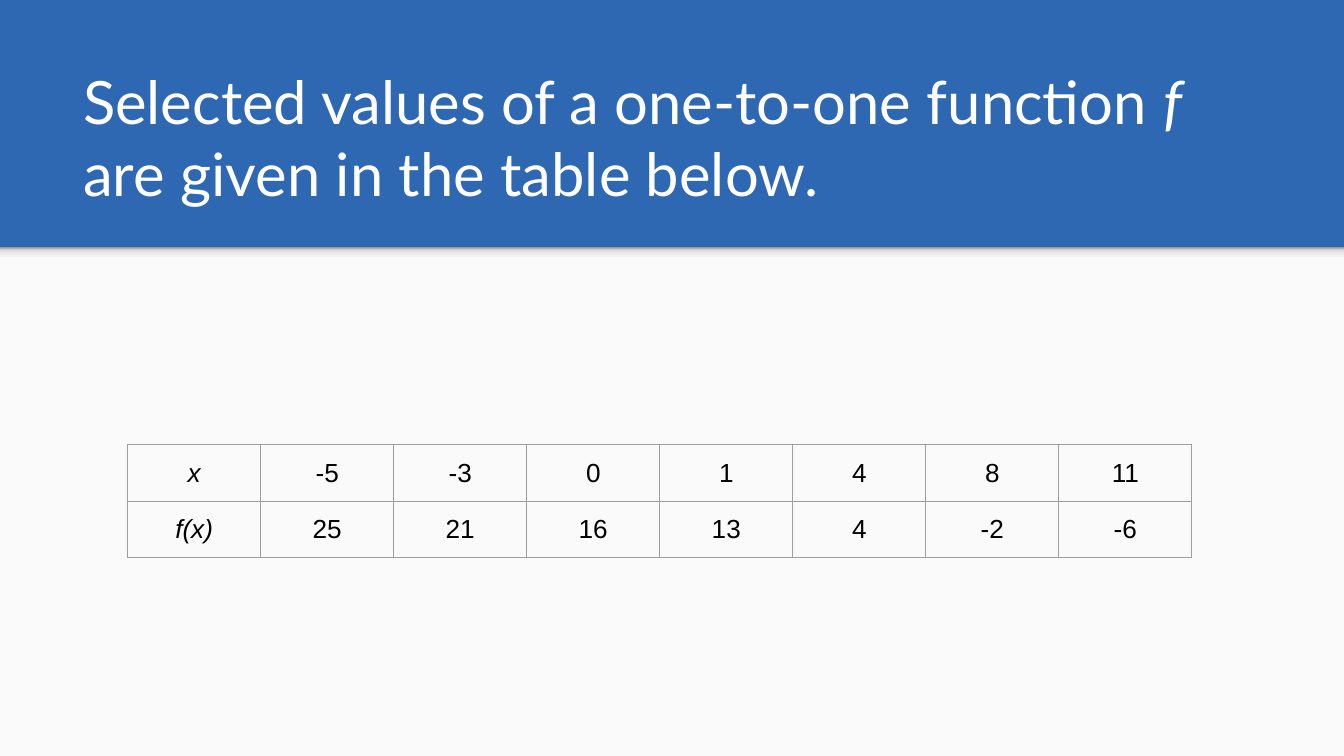
from lxml.etree import SubElement
from pptx import Presentation
from pptx.dml.color import RGBColor
from pptx.enum.shapes import MSO_SHAPE as Shape
from pptx.enum.text import MSO_ANCHOR as Anchor, PP_ALIGN as Align
from pptx.oxml.ns import qn
from pptx.util import Inches, Pt

BLUE, PAPER, WHITE, BLACK, GRAY = "2E67B2", "FAFAFA", "FFFFFF", "000000", "9E9E9E"
SHADOW_STOPS = [(0, "F9F9F9"), (36, "F9F9F9"), (80, "DEDEDE"), (100, "999999")]
TITLE_RUNS = [
    ("Selected values of a one-to-one function ", False),
    ("f", True),
    (" are given in the table below.", False),
]
FUNCTION_VALUES = [
    ["x", "-5", "-3", "0", "1", "4", "8", "11"],
    ["f(x)", "25", "21", "16", "13", "4", "-2", "-6"],
]
TITLE_FONT = {"name": "Lato", "size": Pt(32)}
CELL_FONT = {"name": "Arial", "size": Pt(14), "bold": False}
MARGINS = {f"margin_{side}": Inches(0.1) for side in ("left", "top", "right", "bottom")}
CELL_MARGINS = {**MARGINS, "margin_bottom": Inches(0.08)}


def color(value):
    return RGBColor.from_string(value)


def set_format(target, values):
    for name, value in values.items():
        setattr(target, name, value)


def add_run(paragraph, text, font_format, font_color, italic):
    run = paragraph.add_run()
    run.text = text
    set_format(run.font, {**font_format, "italic": italic})
    run.font.color.rgb = color(font_color)


def add_rectangle(slide, left, top, width, height, fill):
    shape = slide.shapes.add_shape(
        Shape.RECTANGLE, Inches(left), Inches(top), Inches(width), Inches(height)
    )
    shape.shadow.inherit = False
    shape.line.fill.background()
    shape.fill.solid()
    shape.fill.fore_color.rgb = color(fill)
    return shape


def set_gradient(shape, stops):
    shape.fill.gradient()
    shape.fill.gradient_angle = 90
    stop_list = shape.element.spPr.find(qn("a:gradFill")).find(qn("a:gsLst"))
    for stop in list(stop_list):
        stop_list.remove(stop)
    for position, value in stops:
        stop = SubElement(stop_list, qn("a:gs"), pos=str(position * 1000))
        SubElement(stop, qn("a:srgbClr"), val=value)


def add_title(slide, left, top, width, height, runs):
    box = slide.shapes.add_textbox(
        Inches(left), Inches(top), Inches(width), Inches(height)
    )
    frame = box.text_frame
    set_format(frame, {**MARGINS, "word_wrap": True, "vertical_anchor": Anchor.BOTTOM})
    for text, italic in runs:
        add_run(frame.paragraphs[0], text, TITLE_FONT, WHITE, italic)


def set_borders(cell, line_color, width):
    properties = cell._tc.get_or_add_tcPr()
    for side in ("a:lnL", "a:lnR", "a:lnT", "a:lnB"):
        line = SubElement(properties, qn(side), w=str(Pt(width)))
        fill = SubElement(line, qn("a:solidFill"))
        SubElement(fill, qn("a:srgbClr"), val=line_color)


def add_value_table(slide, left, top, column_width, row_height, rows):
    row_count, column_count = len(rows), len(rows[0])
    table = slide.shapes.add_table(
        row_count, column_count, Inches(left), Inches(top),
        Inches(column_width * column_count), Inches(row_height * row_count),
    ).table
    set_format(table, {"first_row": False, "horz_banding": False})
    for row_index, row in enumerate(rows):
        for column_index, text in enumerate(row):
            cell = table.cell(row_index, column_index)
            set_format(cell, CELL_MARGINS)
            set_borders(cell, GRAY, 0.75)
            cell.fill.background()
            paragraph = cell.text_frame.paragraphs[0]
            paragraph.alignment = Align.CENTER
            add_run(paragraph, text, CELL_FONT, BLACK, column_index == 0)


def main():
    presentation = Presentation()
    slide_width = Inches(10)
    slide_size = {"slide_width": slide_width, "slide_height": slide_width * 9 // 16}
    set_format(presentation, slide_size)
    slide = presentation.slides.add_slide(presentation.slide_layouts[6])
    slide.background.fill.solid()
    slide.background.fill.fore_color.rgb = color(BLUE)
    add_rectangle(slide, 0, 1.84, 10, 3.79, PAPER)
    band_shadow = add_rectangle(slide, 0, 1.84, 10, 0.12, PAPER)
    set_gradient(band_shadow, SHADOW_STOPS)
    add_title(slide, 0.52, 0.81, 8.99, 0.84, TITLE_RUNS)
    add_value_table(slide, 0.95, 3.31, 0.99, 0.42, FUNCTION_VALUES)
    presentation.save("out.pptx")


if __name__ == "__main__":
    main()
